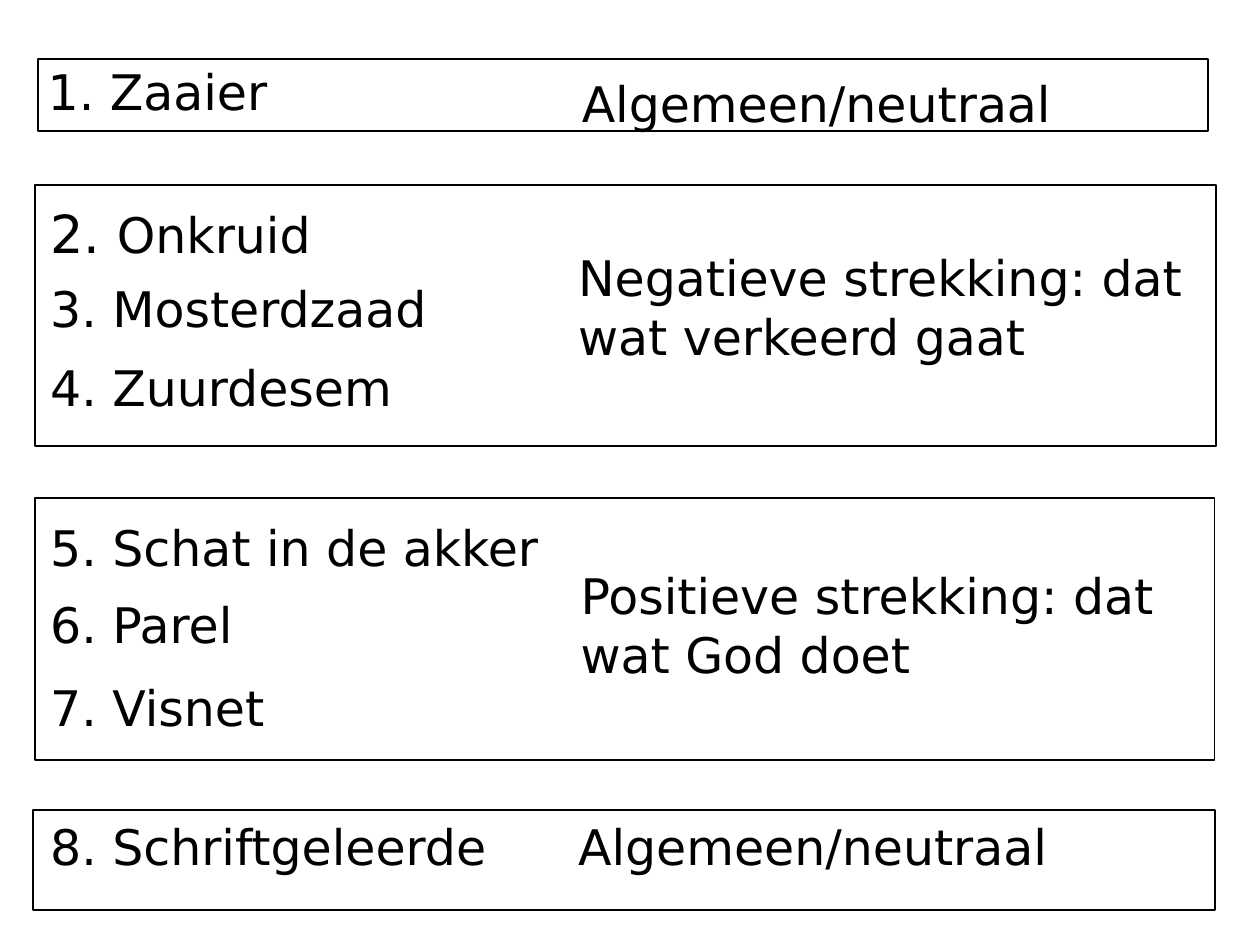
from pptx import Presentation
from pptx.dml.color import RGBColor
from pptx.enum.shapes import MSO_SHAPE
from pptx.enum.text import MSO_AUTO_SIZE
from pptx.util import Pt

RECT = MSO_SHAPE.RECTANGLE
FIT = MSO_AUTO_SIZE.SHAPE_TO_FIT_TEXT
BLACK = RGBColor(0, 0, 0)
FONT = "DejaVu Sans"
SIZE = 28
LINE_H = 41

PARABLES = [
    (20.2, 31.7, 141.8, [("1. Zaaier", SIZE)]),
    (21.6, 111.6, 167.8, [("2. ", 30), ("Onkruid", SIZE)]),
    (21.6, 155.5, 232.6, [("3. Mosterdzaad", SIZE)]),
    (21.6, 200.9, 213.1, [("4. Zuurdesem", SIZE)]),
    (21.6, 292.3, 302.4, [("5. Schat in de akker", SIZE)]),
    (21.6, 336.2, 122.4, [("6. Parel", SIZE)]),
    (21.6, 383.8, 140.4, [("7. Visnet", SIZE)]),
    (21.6, 463, 267.8, [("8. Schriftgeleerde", SIZE)]),
]
MEANINGS = [
    (325.4, 38.2, 477.4, 41, "Algemeen/neutraal"),
    (323.3, 138.2, 402.5, 75, "Negatieve strekking: dat wat verkeerd gaat"),
    (324.7, 319.7, 357.8, 75, "Positieve strekking: dat wat God doet"),
    (323.3, 463, 380.9, 41, "Algemeen/neutraal"),
]
FRAMES = [
    (21.6, 33.8, 668.9, 41),
    (20.2, 105.8, 674.6, 149),
    (20.2, 284.4, 673.9, 149.8),
    (18.7, 463, 675.4, 56.9),
]


def add_text(s, box, runs, wrap):
    sp = s.shapes.add_textbox(*map(Pt, box))
    tf = sp.text_frame
    tf.word_wrap = wrap
    tf.auto_size = FIT
    p = tf.paragraphs[0]
    for text, size in runs:
        r = p.add_run()
        r.text = text
        r.font.name = FONT
        r.font.size = Pt(size)
        r.font.color.rgb = BLACK


def add_frame(s, box):
    sp = s.shapes.add_shape(RECT, *map(Pt, box))
    sp.shadow.inherit = False
    sp.fill.background()
    sp.line.color.rgb = BLACK
    sp.line.width = Pt(1)


prs = Presentation()
prs.slide_width, prs.slide_height = Pt(720), Pt(540)
s = prs.slides.add_slide(prs.slide_layouts[6])

for x, y, w, runs in PARABLES:
    h = LINE_H * max(size for _, size in runs) / SIZE
    add_text(s, (x, y, w, h), runs, False)
for *box, text in MEANINGS:
    add_text(s, box, [(text, SIZE)], True)
for box in FRAMES:
    add_frame(s, box)

prs.save("out.pptx")
